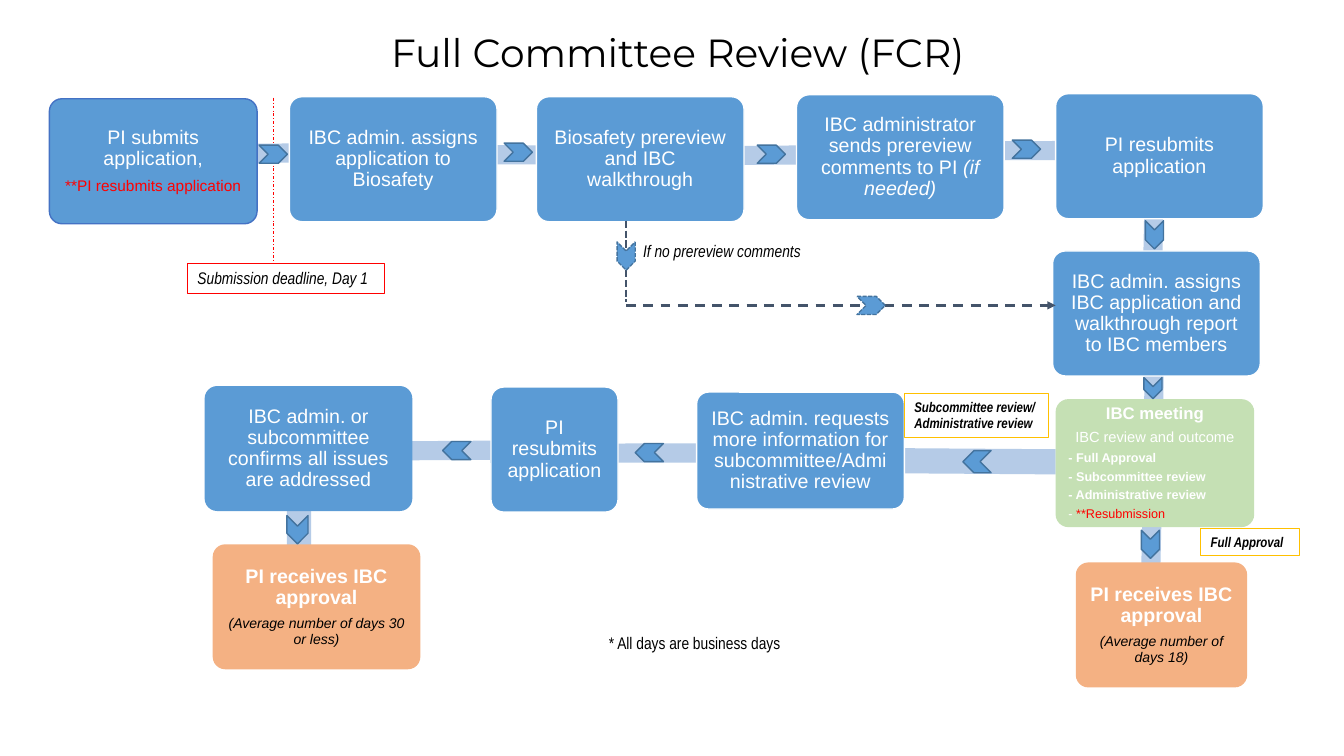
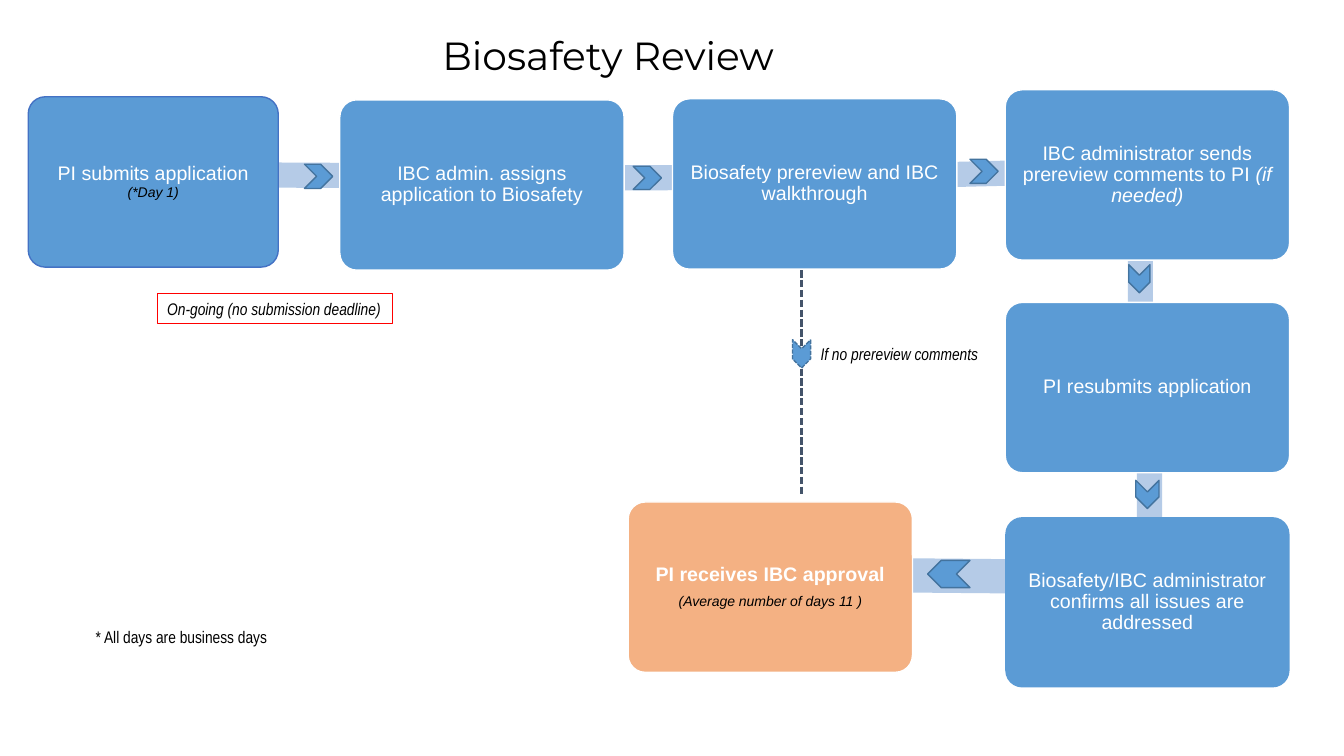
from lxml import etree
from pptx import Presentation
from pptx.dml.color import RGBColor
from pptx.enum.dml import MSO_LINE
from pptx.enum.shapes import MSO_CONNECTOR, MSO_SHAPE
from pptx.enum.text import MSO_ANCHOR, MSO_AUTO_SIZE, PP_ALIGN
from pptx.oxml.ns import qn
from pptx.util import Inches, Pt

CENTER, LEFT = PP_ALIGN.CENTER, PP_ALIGN.LEFT
SHORT_DASH, DASH, DASH_DOT = MSO_LINE.SQUARE_DOT, MSO_LINE.DASH, MSO_LINE.DASH_DOT

WHITE, BLACK, RED, GOLD = "FFFFFF", "000000", "FF0000", "FFC000"
BLUE, ORANGE, GREEN = "5B9BD5", "F4B183", "C5E0B4"
BAND_BLUE, FIRST_OUTLINE, CHEVRON_OUTLINE, DASH_COLOR = "B5CBE7", "4472C4", "43739E", "44546A"
BODY_FONT, LABEL_FONT, TITLE_FONT = "Arial", "Arial Narrow", "Montserrat"

BOX_INSET = 0.09
CHEVRON_LENGTH, CHEVRON_WIDTH = 0.28, 0.18
RIGHT, DOWN, BACK = 0, 90, 180


def rgb(color):
    return RGBColor.from_string(color)


def add_run(paragraph, text, size, color, style="", font=BODY_FONT):
    """Style holds 'b' for bold and 'i' for italic."""
    run = paragraph.add_run()
    run.text = text
    run.font.name = font
    run.font.size = Pt(size)
    run.font.bold = "b" in style
    run.font.italic = "i" in style
    run.font.color.rgb = rgb(color)


def set_line(line, color, width, dash=None):
    if color is None:
        line.fill.background()
        return
    line.color.rgb = rgb(color)
    line.width = Pt(width)
    if dash is not None:
        line.dash_style = dash


def add_preset(slide, preset, place, fill, outline=None, rotation=0, dash=None):
    shape = slide.shapes.add_shape(preset, *map(Inches, place))
    shape.shadow.inherit = False
    shape.fill.solid()
    shape.fill.fore_color.rgb = rgb(fill)
    set_line(shape.line, outline, 1, dash)
    shape.rotation = rotation
    return shape


def add_band(slide, left, top, length, thickness, rotation):
    add_preset(slide, MSO_SHAPE.RECTANGLE, (left, top, length, thickness), BAND_BLUE,
               rotation=rotation)


def add_chevron(slide, left, top, direction=RIGHT, width=CHEVRON_WIDTH,
                length=CHEVRON_LENGTH, dash=None):
    add_preset(slide, MSO_SHAPE.CHEVRON, (left, top, length, width), BLUE,
               CHEVRON_OUTLINE, direction, dash)


def add_box(slide, place, paragraphs, fill=BLUE, outline=WHITE):
    """Each paragraph is a pair: alignment and a list of runs."""
    shape = add_preset(slide, MSO_SHAPE.ROUNDED_RECTANGLE, place, fill, outline)
    shape.adjustments[0] = 0.1
    frame = shape.text_frame
    frame.word_wrap = True
    frame.vertical_anchor = MSO_ANCHOR.MIDDLE
    frame.margin_left = frame.margin_right = Inches(BOX_INSET)
    frame.margin_top = frame.margin_bottom = Inches(BOX_INSET)
    for index, (alignment, runs) in enumerate(paragraphs):
        paragraph = frame.add_paragraph() if index else frame.paragraphs[0]
        paragraph.alignment = alignment
        paragraph.line_spacing = 0.9
        paragraph.space_after = Pt(round(0.4 * runs[0][1], 1))
        for run in runs:
            add_run(paragraph, *run)


def step(text, condition=""):
    """Paragraphs of an ordinary step, with an optional condition in italics."""
    runs = [(text, 14, WHITE)]
    if condition:
        runs.append((condition, 14, WHITE, "i"))
    return [(CENTER, runs)]


def approval(duration):
    return [(CENTER, [("PI receives IBC approval", 14, WHITE, "b")]),
            (CENTER, [(duration, 10, BLACK, "i")])]


def add_label(slide, place, text, size=12, style="", font=LABEL_FONT, outline=None):
    label = slide.shapes.add_textbox(*map(Inches, place))
    set_line(label.line, outline, 0.75)
    frame = label.text_frame
    frame.word_wrap = True
    frame.auto_size = MSO_AUTO_SIZE.SHAPE_TO_FIT_TEXT
    add_run(frame.paragraphs[0], text, size, BLACK, style, font)


def add_title(slide, left, top, width, text):
    add_label(slide, (left, top, width, 0.57), text, 28, font=TITLE_FONT)


def add_day_note(slide, left, top):
    add_label(slide, (left, top, 2.01, 0.3), "* All days are business days")


def add_bypass_note(slide, left, top):
    add_label(slide, (left, top, 1.8, 0.3), "If no prereview comments", style="i")


def add_dashed_line(slide, start, end, dash, color=DASH_COLOR, width=1.75, arrow=False):
    connector = slide.shapes.add_connector(
        MSO_CONNECTOR.STRAIGHT, *map(Inches, start + end))
    set_line(connector.line, color, width, dash)
    if arrow:
        etree.SubElement(connector.line._get_or_add_ln(), qn("a:tailEnd"), type="triangle")
    etree.SubElement(connector._element.spPr, qn("a:effectLst"))


def build_full_committee_review(slide):
    for band in [
        (0.91, 1.43, 2.38, 0.19, 359.5), (3.28, 1.44, 2.45, 0.19, 0.1),
        (5.76, 1.45, 2.58, 0.19, 359.5), (8.33, 1.4, 2.57, 0.19, 359.9),
        (10.67, 1.91, 1.55, 0.19, 91.1), (10.71, 3.44, 1.48, 0.19, 90.9),
        (10.62, 5.26, 1.6, 0.19, 91.3), (8.52, 4.45, 1.95, 0.25, 180.4),
        (4.86, 4.4, 2.44, 0.19, 179.9), (2.43, 4.38, 2.44, 0.19, 179.6),
        (2.18, 4.89, 1.57, 0.24, 90),
    ]:
        add_band(slide, *band)

    width, height = 2.06, 1.24
    add_box(slide, (0.49, 0.98, width, height), [
        (CENTER, [("PI submits application,", 14, WHITE)]),
        (CENTER, [("**PI resubmits application", 11, RED)]),
    ], outline=FIRST_OUTLINE)
    for left, top, paragraphs in [
        (2.87, 0.96, step("IBC admin. assigns application to Biosafety")),
        (5.32, 0.96, step("Biosafety prereview and IBC walkthrough")),
        (7.9, 0.94, step("IBC administrator sends prereview comments to PI ", "(if needed)")),
        (10.47, 0.93, step("PI resubmits application")),
        (10.44, 2.49, step("IBC admin. assigns IBC application and walkthrough report "
                           "to IBC members")),
    ]:
        add_box(slide, (left, top, width, height), paragraphs)

    outcomes = ["Full Approval", "Subcommittee review", "Administrative review"]
    add_box(slide, (10.47, 3.96, 1.97, 1.27), [
        (CENTER, [("IBC meeting", 12, WHITE, "b")]),
        (CENTER, [("IBC review and outcome", 10.5, WHITE)]),
        *[(LEFT, [("- ", 9, WHITE, "b"), (outcome, 9, WHITE, "b")]) for outcome in outcomes],
        (LEFT, [("- ", 9, WHITE), ("**Resubmission", 9, RED)]),
    ], GREEN, None)
    add_box(slide, (10.67, 5.58, 1.7, height),
            approval("(Average number of days 18)"), ORANGE, None)
    add_box(slide, (6.91, 3.89, width, 1.16),
            step("IBC admin. requests more information for subcommittee/Administrative review"))
    add_box(slide, (4.87, 3.84, 1.26, height), step("PI resubmits application"))
    add_box(slide, (2.03, 3.83, width, height),
            step("IBC admin. or subcommittee confirms all issues are addressed"), outline=None)
    add_box(slide, (2.11, 5.4, width, height),
            approval("(Average number of days 30 or less)"), ORANGE, None)

    add_dashed_line(slide, (2.71, 0.97), (2.71, 2.61), DASH_DOT, RED, 0.5)
    add_label(slide, (1.86, 2.61, 1.95, 0.3), "Submission deadline, Day 1", style="i", outline=RED)
    add_title(slide, 3.78, 0.23, 6.95, "Full Committee Review (FCR)")
    for place, text in [
        ((11.91, 5.24, 0.98, 0.27), "Full Approval"),
        ((8.97, 3.9, 1.43, 0.44), "Subcommittee review/ Administrative review"),
    ]:
        add_label(slide, place, text, 10, "bi", outline=GOLD)
    add_dashed_line(slide, (6.21, 2.19), (6.21, 3), SHORT_DASH)
    add_dashed_line(slide, (6.21, 3.03), (10.47, 3.03), DASH, arrow=True)
    add_bypass_note(slide, 6.28, 2.34)

    for left, top in [(2.57, 1.44), (5, 1.42), (7.51, 1.44), (10.04, 1.39)]:
        add_chevron(slide, left, top)
    add_chevron(slide, 11.31, 2.24, DOWN)
    add_chevron(slide, 11.33, 3.76, DOWN, length=0.21)
    add_chevron(slide, 11.27, 5.31, DOWN)
    add_chevron(slide, 9.55, 4.47, BACK, 0.22)
    add_chevron(slide, 6.3, 4.4, BACK)
    add_chevron(slide, 4.39, 4.38, BACK)
    add_chevron(slide, 2.81, 5.15, DOWN, 0.21)
    add_chevron(slide, 8.5, 2.94, dash=SHORT_DASH)
    add_chevron(slide, 6.07, 2.45, DOWN, dash=SHORT_DASH)
    add_day_note(slide, 5.94, 6.23)


def build_biosafety_review(slide):
    for band in [
        (0.69, 1.61, 3.26, 0.25, 0.3), (3.94, 1.64, 3.3, 0.25, 359.9),
        (7.26, 1.62, 3.3, 0.25, 358.6), (10.26, 2.22, 2.1, 0.25, 90),
        (10.34, 4.35, 2.12, 0.25, 90), (8.37, 5.54, 1.77, 0.34, 180.5),
    ]:
        add_band(slide, *band)

    width, height = 2.82, 1.69
    add_box(slide, (0.28, 0.96, 2.48, height), [
        (CENTER, [("PI submits application ", 14, WHITE), ("(*Day 1)", 10, BLACK, "i")]),
    ], outline=FIRST_OUTLINE)
    for left, top, paragraphs, fill, outline in [
        (3.37, 0.99, step("IBC admin. assigns application to Biosafety"), BLUE, WHITE),
        (6.67, 0.98, step("Biosafety prereview and IBC walkthrough"), BLUE, WHITE),
        (9.97, 0.89, step("IBC administrator sends prereview comments to PI ",
                          "(if needed)"), BLUE, WHITE),
        (9.97, 3, step("PI resubmits application"), BLUE, WHITE),
        (9.97, 5.13, step("Biosafety/IBC administrator confirms all issues are addressed"),
         BLUE, None),
        (6.23, 4.98, approval("(Average number of days 11 )"), ORANGE, WHITE),
    ]:
        add_box(slide, (left, top, width, height), paragraphs, fill, outline)

    add_label(slide, (1.56, 2.91, 2.33, 0.3), "On-going (no submission deadline)",
              style="i", outline=RED)
    add_title(slide, 4.29, 0.26, 4.76, "Biosafety Review")
    add_dashed_line(slide, (7.95, 2.68), (7.95, 4.91), SHORT_DASH)
    add_bypass_note(slide, 8.04, 3.36)

    add_chevron(slide, 3.02, 1.63, RIGHT, 0.24)
    add_chevron(slide, 6.28, 1.65, RIGHT, 0.23)
    add_chevron(slide, 9.62, 1.58, RIGHT, 0.24)
    add_chevron(slide, 11.16, 2.66, DOWN, 0.21)
    add_chevron(slide, 11.24, 4.79, DOWN, 0.23)
    add_chevron(slide, 9.2, 5.56, BACK, 0.27, 0.42)
    add_chevron(slide, 7.81, 3.42, DOWN, dash=SHORT_DASH)
    add_day_note(slide, 0.85, 6.17)


def main():
    presentation = Presentation()
    presentation.slide_width = Inches(13.33)
    presentation.slide_height = Inches(7.5)
    blank_layout = presentation.slide_layouts[6]
    for build in (build_full_committee_review, build_biosafety_review):
        build(presentation.slides.add_slide(blank_layout))
    presentation.save("out.pptx")


if __name__ == "__main__":
    main()
